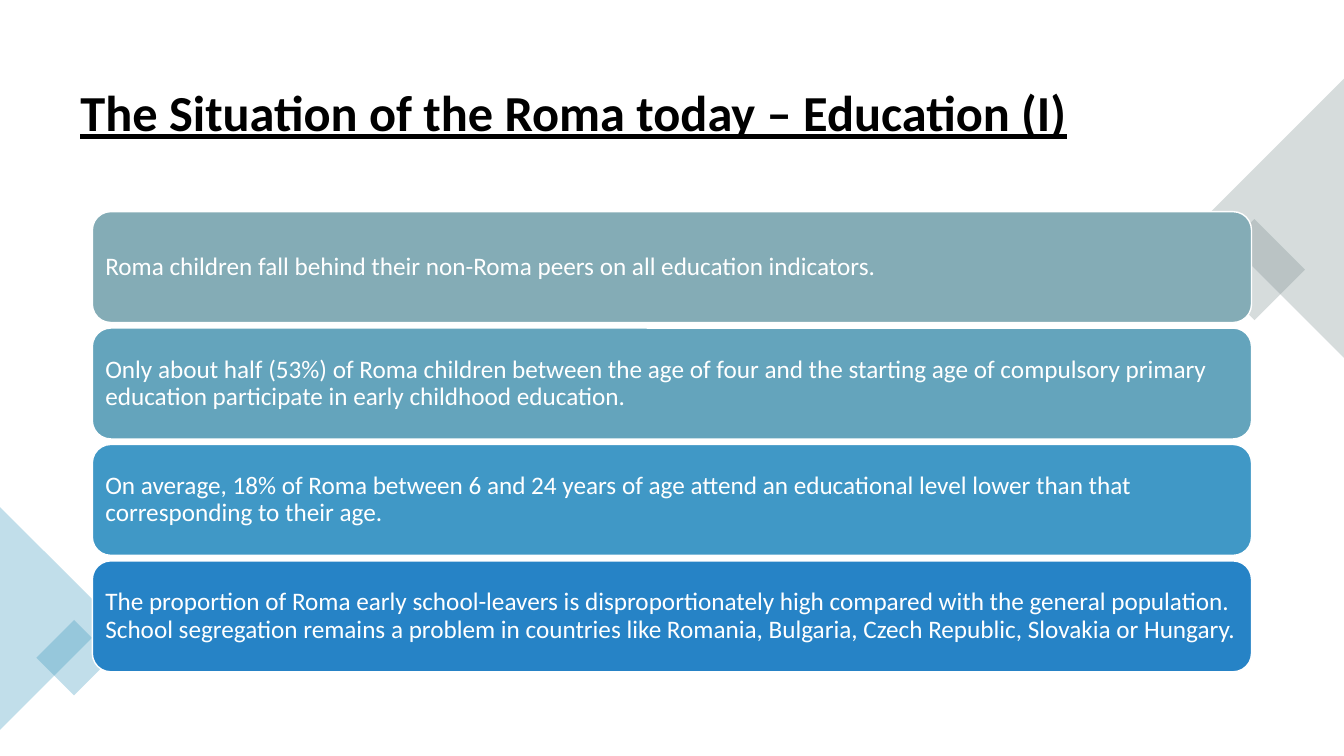
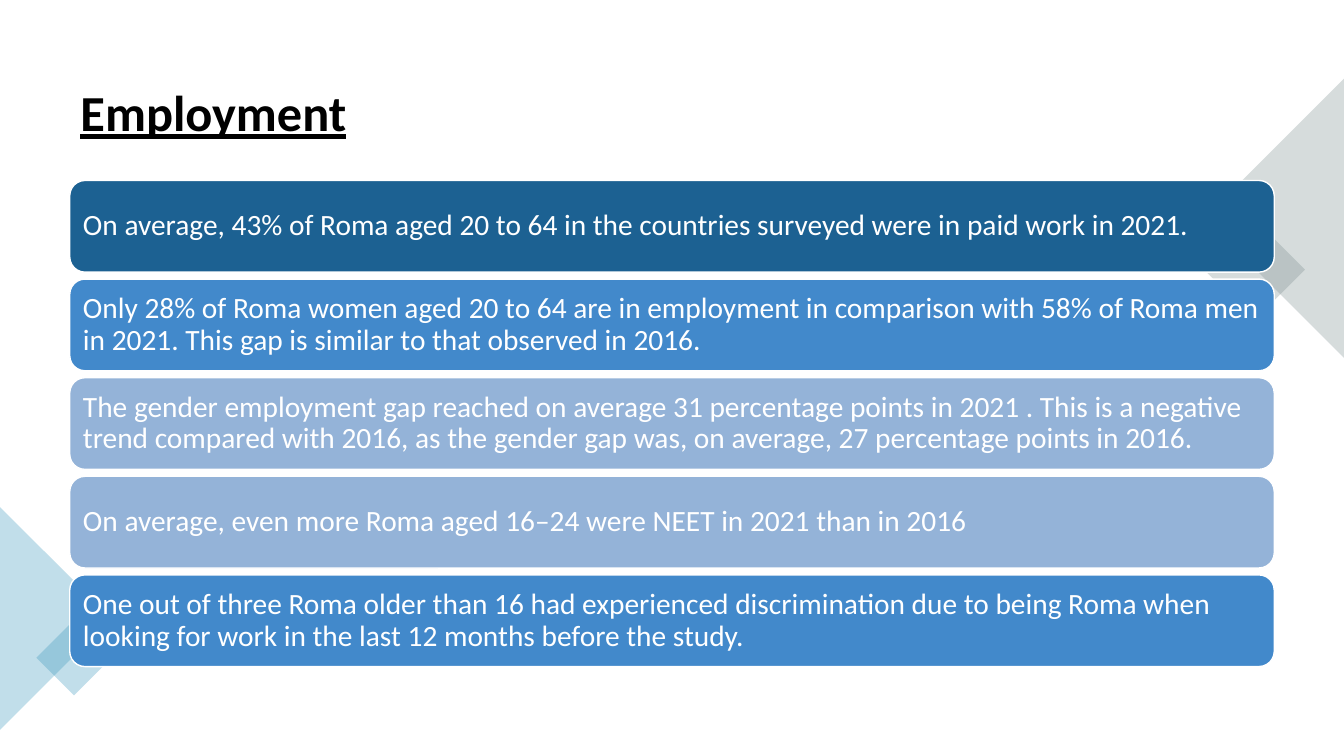
import lxml.etree
import pptx
import pptx.dml.color
import pptx.enum.shapes
import pptx.enum.text
import pptx.oxml.ns
import pptx.util

SHAPES = pptx.enum.shapes.MSO_SHAPE


def colour(code):
    return pptx.dml.color.RGBColor.from_string(code)


class FactDeck:
    columns, rows = 160, 90
    cell = pptx.util.Inches(1) / 12
    font = "Calibri"
    ink, paper = "000000", "FFFFFF"
    grey, teal = "7A8C8E", "3494BA"
    opacity = 30

    def __init__(self):
        self.deck = pptx.Presentation()
        self.deck.slide_width = self.length(self.columns)
        self.deck.slide_height = self.length(self.rows)
        self.page = None

    def length(self, cells):
        return pptx.util.Emu(round(cells * self.cell))

    def frame(self, column, row, width, height):
        return [self.length(cells) for cells in (column, row, width, height)]

    def add_page(self, title):
        self.page = self.deck.slides.add_slide(self.deck.slide_layouts[6])
        self.title(title)
        self.corner(151.69, 25.98, 33.24, 270, self.grey)
        self.tilted_square(149.34, 32.1, 8.52, self.grey)
        self.corner(6.63, 73.62, 26.52, 90, self.teal)
        self.tilted_square(8.82, 78.3, 6.36, self.teal)

    def set_text(self, box, text, size, code, bold=False, underline=False):
        frame = box.text_frame
        frame.text = text
        frame.word_wrap = True
        frame.vertical_anchor = pptx.enum.text.MSO_ANCHOR.MIDDLE
        para = frame.paragraphs[0]
        para.alignment = pptx.enum.text.PP_ALIGN.LEFT
        para.line_spacing = 0.9
        for span in para.runs:
            span.font.name = self.font
            span.font.size = pptx.util.Pt(size)
            span.font.bold = bold
            span.font.underline = underline
            span.font.color.rgb = colour(code)

    def title(self, text):
        box = self.page.shapes.add_textbox(*self.frame(8.4, 6.24, 143.2, 14.88))
        self.set_text(box, text, 36, self.ink, bold=True, underline=True)

    def shape(self, kind, place, fill):
        shape = self.page.shapes.add_shape(kind, *self.frame(*place))
        shape.shadow.inherit = False
        shape.fill.solid()
        shape.fill.fore_color.rgb = colour(fill)
        return shape

    def ornament(self, kind, center, size, rotation, fill):
        (column, row), (width, height) = center, size
        place = (column - width / 2, row - height / 2, width, height)
        shape = self.shape(kind, place, fill)
        shape.rotation = rotation
        shape.line.fill.background()
        tag = pptx.oxml.ns.qn("a:srgbClr")
        alpha = pptx.oxml.ns.qn("a:alpha")
        for element in shape.element.spPr.iter(tag):
            lxml.etree.SubElement(element, alpha, val=str(self.opacity * 1000))

    def corner(self, column, row, base, rotation, fill):
        self.ornament(SHAPES.ISOSCELES_TRIANGLE, (column, row),
                      (base, base / 2), rotation, fill)

    def tilted_square(self, column, row, side, fill):
        self.ornament(SHAPES.RECTANGLE, (column, row), (side, side), 45, fill)

    def card(self, place, text, fill, size, inset):
        card = self.shape(SHAPES.ROUNDED_RECTANGLE, place, fill)
        card.line.color.rgb = colour(self.paper)
        card.line.width = pptx.util.Pt(1)
        frame = card.text_frame
        frame.margin_left = frame.margin_right = self.length(inset)
        frame.margin_top = frame.margin_bottom = self.length(inset)
        self.set_text(card, text, size, self.paper)

    def cards(self, facts, top, width, height, gap, size, inset):
        left = (self.columns - width) / 2
        for index, (fill, text) in enumerate(facts):
            row = top + index * (height + gap)
            self.card((left, row, width, height), text, fill, size, inset)


EDUCATION = [
    ("84ACB6", "Roma children fall behind their non-Roma peers on all "
               "education indicators."),
    ("64A4BC", "Only about half (53%) of Roma children between the age of four "
               "and the starting age of compulsory primary education "
               "participate in early childhood education."),
    ("4098C6", "On average, 18% of Roma between 6 and 24 years of age attend an "
               "educational level lower than that corresponding to their age."),
    ("2683C6", "The proportion of Roma early school-leavers is "
               "disproportionately high compared with the general "
               "population. School segregation remains a problem in countries "
               "like Romania, Bulgaria, Czech Republic, Slovakia or Hungary."),
]

EMPLOYMENT = [
    ("1C6192", "On average, 43% of Roma aged 20 to 64 in the countries surveyed "
               "were in paid work in 2021."),
    ("4289CB", "Only 28% of Roma women aged 20 to 64 are in employment in "
               "comparison with 58% of Roma men in 2021. This gap is similar "
               "to that observed in 2016."),
    ("94B3D8", "The gender employment gap reached on average 31 percentage "
               "points in 2021 . This is a negative trend compared with 2016, "
               "as the gender gap was, on average, 27 percentage points in "
               "2016."),
    ("94B3D8", "On average, even more Roma aged 16–24 were NEET in 2021 than "
               "in 2016"),
    ("4289CB", "One out of three Roma older than 16 had experienced "
               "discrimination due to being Roma when looking for work in the "
               "last 12 months before the study."),
]


def main():
    facts = FactDeck()
    facts.add_page("The Situation of the Roma today – Education (I)")
    facts.cards(EDUCATION, top=25.2, width=138, height=13.2, gap=0.66,
                size=18, inset=0.9)
    facts.add_page("Employment")
    facts.cards(EMPLOYMENT, top=21.48, width=143.4, height=10.92, gap=0.82,
                size=21, inset=1.05)
    facts.deck.save("out.pptx")


if __name__ == "__main__":
    main()
